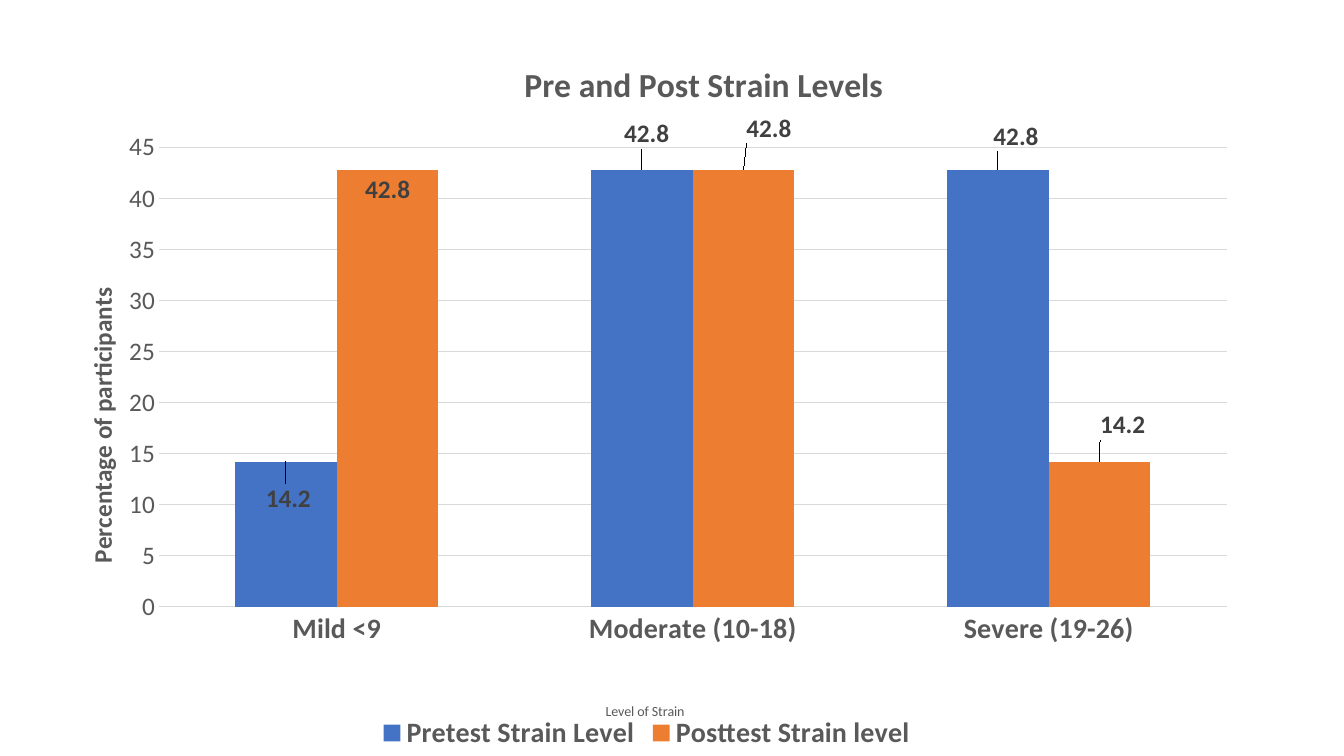
from lxml import etree
from pptx import Presentation
from pptx.chart.data import CategoryChartData
from pptx.dml.color import RGBColor
from pptx.enum.chart import XL_CHART_TYPE as ChartType
from pptx.enum.chart import XL_LABEL_POSITION as LabelPosition
from pptx.enum.chart import XL_LEGEND_POSITION as LegendPosition
from pptx.enum.chart import XL_TICK_MARK as TickMark
from pptx.oxml.ns import qn
from pptx.util import Inches, Pt

BLACK = RGBColor(0x00, 0x00, 0x00)
LABEL_GREY = RGBColor(0x40, 0x40, 0x40)
TEXT_GREY = RGBColor(0x59, 0x59, 0x59)
GRID_GREY = RGBColor(0xD9, 0xD9, 0xD9)
BLUE = RGBColor(0x44, 0x72, 0xC4)
ORANGE = RGBColor(0xED, 0x7D, 0x31)

FONT = "Calibri"
LEVELS = ["Mild <9", "Moderate (10-18)", "Severe (19-26)"]
# name, values, colour, label shifts as shares of the chart's size
TESTS = [
    ("Pretest Strain Level", [14.2, 42.8, 42.8], BLUE,
     [(0.002, 0.079), (0.004, -0.023), (0.015, -0.02)]),
    ("Posttest Strain level", [42.8, 42.8, 14.2], ORANGE,
     [(0, 0.055), (0.021, -0.031), (0.019, -0.025)]),
]


def style_font(font, size, bold=False, color=TEXT_GREY):
    font.name = FONT
    font.size = Pt(size)
    font.bold = bold
    font.color.rgb = color


def place(element, position, **settings):
    """Give a chart element a manual layout as its child at this position."""
    for old in element.findall(qn("c:layout")):
        element.remove(old)
    layout = etree.Element(qn("c:layout"))
    manual = etree.SubElement(layout, qn("c:manualLayout"))
    for tag, value in settings.items():
        etree.SubElement(manual, qn("c:" + tag)).set("val", str(value))
    element.insert(position, layout)


def write_title(title, text, size, bold, x, y, rotation=0):
    frame = title.text_frame
    run = frame.paragraphs[0].add_run()
    run.text = text
    style_font(run.font, size, bold)
    body = title._element.find(".//" + qn("a:bodyPr"))
    body.set("rot", str(rotation * 60000))
    body.set("vert", "horz")
    place(title._element, 1, xMode="edge", yMode="edge", x=x, y=y)


def style_axis(axis, size, bold=False):
    axis.major_tick_mark = axis.minor_tick_mark = TickMark.NONE
    axis.format.line.fill.background()
    style_font(axis.tick_labels.font, size, bold)


def style_axes(chart):
    levels = chart.category_axis
    style_axis(levels, 20, True)
    write_title(levels.axis_title, "Level of Strain", 10, False, 0.464, 0.92)

    percent = chart.value_axis
    style_axis(percent, 18)
    percent.minimum_scale, percent.maximum_scale, percent.major_unit = 0, 45, 5
    percent.has_major_gridlines = True
    grid = percent.major_gridlines.format.line
    grid.color.rgb = GRID_GREY
    grid.width = Pt(0.75)
    write_title(percent.axis_title, "Percentage of participants", 18, True,
                0.032, 0.334, rotation=-90)


def style_series(series, color, shifts):
    series.format.fill.solid()
    series.format.fill.fore_color.rgb = color
    series.invert_if_negative = False
    labels = series.data_labels
    labels.show_value = True
    labels.position = LabelPosition.OUTSIDE_END
    style_font(labels.font, 18, True, LABEL_GREY)
    for index in range(len(shifts)):
        label = series.points[index].data_label
        label.position = LabelPosition.OUTSIDE_END
        style_font(label.font, 18, True, LABEL_GREY)
    for element, (x, y) in zip(series._element.iter(qn("c:dLbl")), shifts):
        place(element, 1, x=x, y=y)


def add_strain_chart(slide, left, top, width, height):
    data = CategoryChartData()
    data.categories = LEVELS
    for name, values, _, _ in TESTS:
        data.add_series(name, values)
    chart = slide.shapes.add_chart(
        ChartType.COLUMN_CLUSTERED, left, top, width, height, data).chart
    style_font(chart.font, 10, color=BLACK)
    write_title(chart.chart_title, "Pre and Post Strain Levels", 24, True,
                0.394, 0.014)
    style_axes(chart)

    columns = chart.plots[0]
    columns.gap_width, columns.overlap = 150, 0
    columns.vary_by_categories = False
    for series, (_, _, color, shifts) in zip(columns.series, TESTS):
        style_series(series, color, shifts)

    chart.has_legend = True
    chart.legend.position = LegendPosition.BOTTOM
    chart.legend.include_in_layout = False
    style_font(chart.legend.font, 20, True)
    place(chart._chartSpace.find(".//" + qn("c:plotArea")), 0,
          layoutTarget="inner", xMode="edge", yMode="edge",
          x=0.097, y=0.142, w=0.882, h=0.648)


def main():
    deck = Presentation()
    deck.slide_width, deck.slide_height = Inches(13.33), Inches(7.5)
    slide = deck.slides.add_slide(deck.slide_layouts[6])
    add_strain_chart(slide, Inches(0.41), Inches(0.46),
                     Inches(12.01), Inches(7.04))
    deck.save("out.pptx")


if __name__ == "__main__":
    main()
